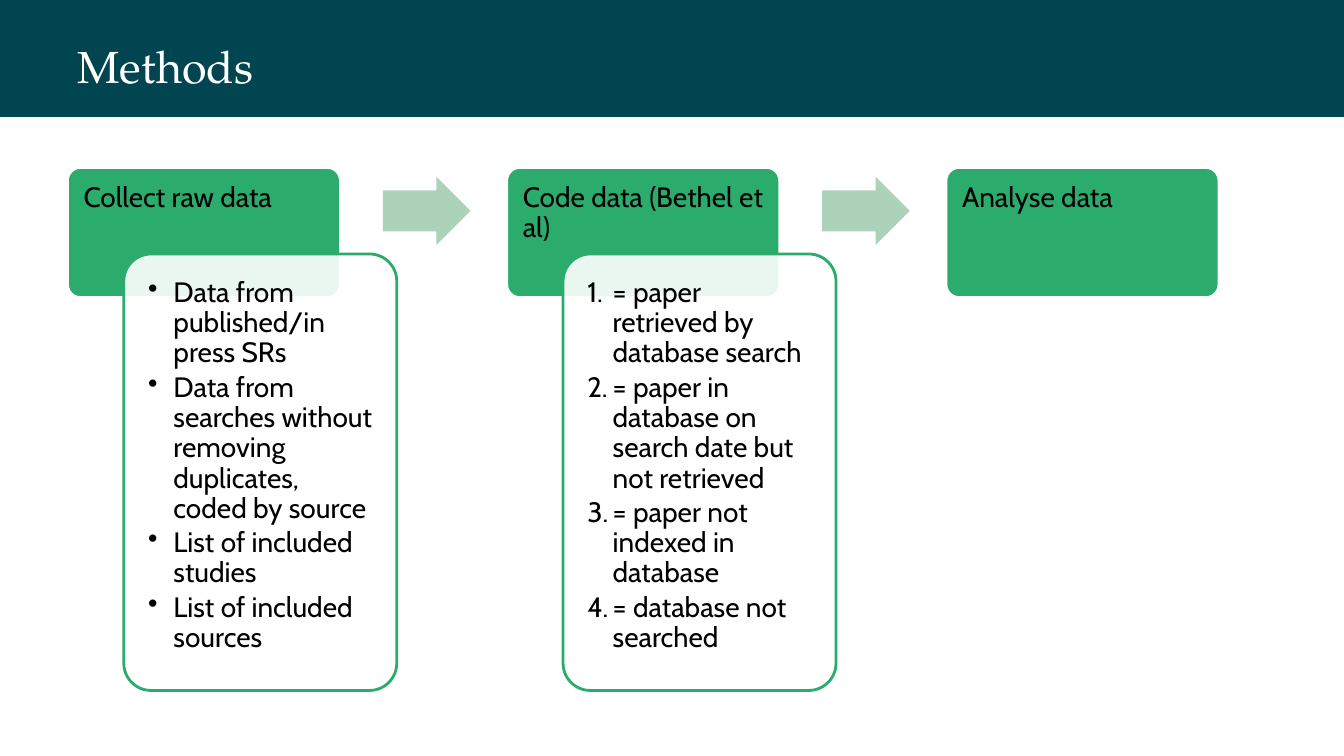
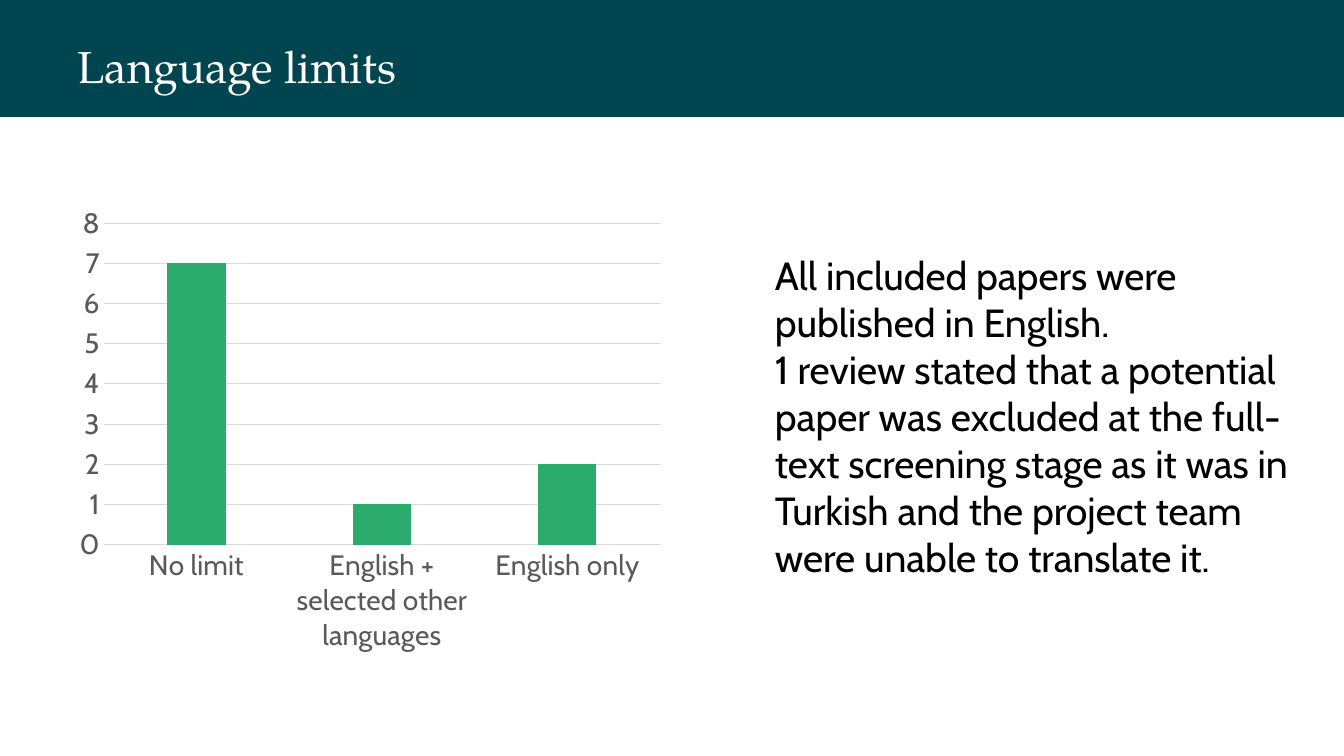
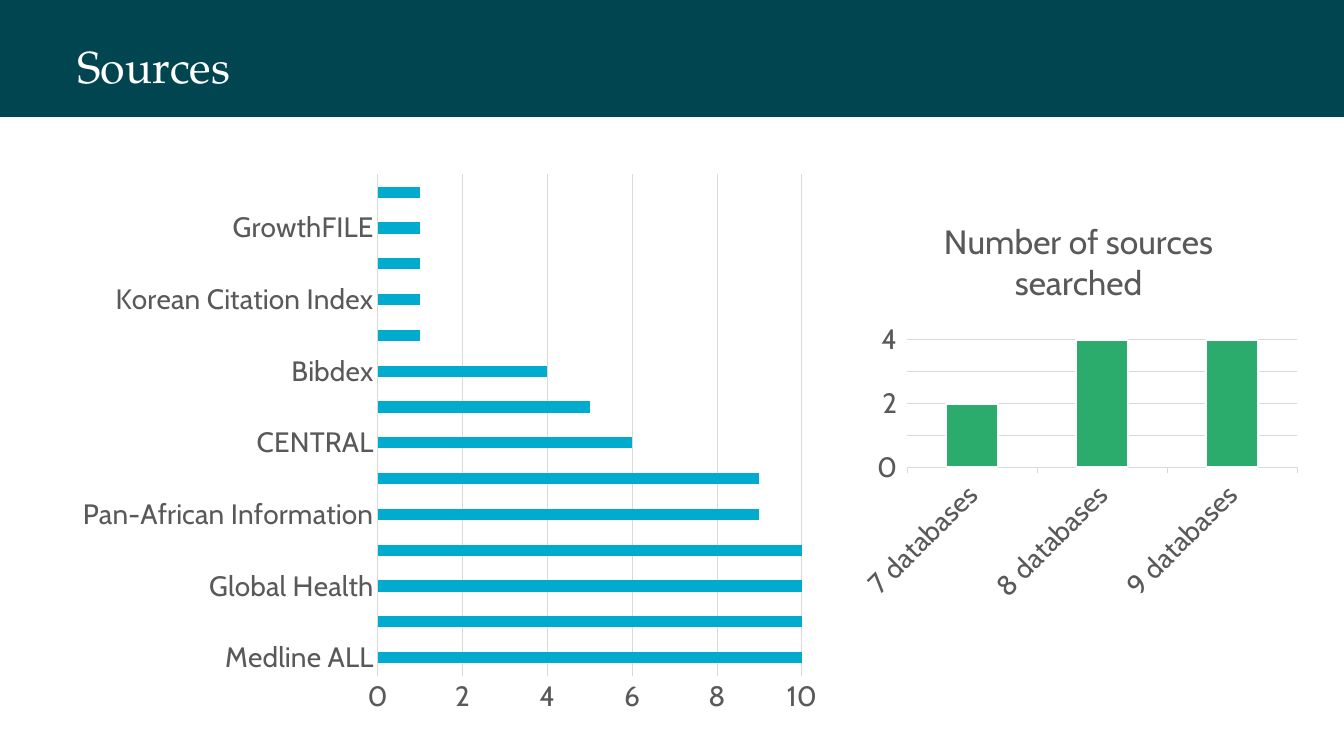
"""Build three slides on review methods, language limits and sources."""
from dataclasses import dataclass
from typing import Optional

import lxml.etree
import pptx
import pptx.chart.data
import pptx.dml.color
import pptx.enum.chart
import pptx.enum.shapes
import pptx.enum.text
import pptx.oxml.ns
import pptx.util

Cm = pptx.util.Cm
Pt = pptx.util.Pt
qn = pptx.oxml.ns.qn
XL = pptx.enum.chart.XL_CHART_TYPE
Tick = pptx.enum.chart.XL_TICK_MARK
Preset = pptx.enum.shapes.MSO_SHAPE
Anchor = pptx.enum.text.MSO_ANCHOR

COLORS = {
    "band": "004550",
    "green": "2BAC6D",
    "pale_green": "ADD2BA",
    "blue": "00ABCE",
    "white": "FFFFFF",
    "black": "000000",
    "label": "595959",
    "grid": "D9D9D9",
}
HEADING_FONT = "TeX Gyre Pagella"
BODY_FONT = "Cabin"
LEFT = 1.7
STEP_PITCH = 11.07
STEP_WIDTH = 6.88


@dataclass(frozen=True)
class Step:
    heading: str
    details: tuple[str, ...] = ()
    numbered: bool = False


@dataclass(frozen=True)
class BarChart:
    kind: int
    box: tuple[float, float, float, float]
    series: str
    values: dict[str, int]
    color: str
    top: int
    unit: int
    gap: int
    overlap: int = 0
    title: str = ""
    tick: int = Tick.NONE
    outline: Optional[str] = None
    label_rotation: Optional[int] = None


STEPS = (
    Step("Collect raw data", (
        "Data from published/in press SRs",
        "Data from searches without removing duplicates, coded by source",
        "List of included studies",
        "List of included sources",
    )),
    Step("Code data (Bethel et al)", (
        "= paper retrieved by database search",
        "= paper in database on search date but not retrieved",
        "= paper not indexed in database",
        "= database not searched",
    ), numbered=True),
    Step("Analyse data"),
)

LANGUAGE_CHART = BarChart(
    XL.COLUMN_CLUSTERED, (LEFT, 4.95, 15.24, 11.73), "Series 1",
    {"No limit": 7, "English + selected other languages": 1, "English only": 2},
    "green", top=8, unit=1, gap=219, overlap=-27, label_rotation=0,
)
SOURCE_CHART = BarChart(
    XL.BAR_CLUSTERED, (LEFT, 4.11, 19.28, 14.17), "Series 1",
    {
        "Medline ALL": 10, "Medbas": 10, "Global Health": 10,
        "Citation Index CC": 10, "Pan-African Information": 9,
        "Global Index Medicus": 9, "CENTRAL": 6, "Nursing Complete": 5,
        "Bibdex": 4, "EconBas": 1, "Korean Citation Index": 1, "SciELO": 1,
        "GrowthFILE": 1, "MindInfo": 1,
    },
    "blue", top=10, unit=2, gap=219,
)
COUNT_CHART = BarChart(
    XL.COLUMN_CLUSTERED, (21.44, 5, 11.48, 10.41), "Number of sources searched",
    {"7 databases": 2, "8 databases": 4, "9 databases": 4},
    "green", top=4, unit=1, gap=150, title="Number of sources searched",
    tick=Tick.OUTSIDE, outline="white", label_rotation=-45,
)
LANGUAGE_NOTES = (
    "All included papers were published in English.",
    "1 review stated that a potential paper was excluded at the full-text "
    "screening stage as it was in Turkish and the project team were unable "
    "to translate it.",
)


def rgb(name: str) -> pptx.dml.color.RGBColor:
    return pptx.dml.color.RGBColor.from_string(COLORS[name])


def style_font(font, size: float, color: str, name: str = BODY_FONT) -> None:
    font.size, font.name, font.bold = Pt(size), name, False
    font.color.rgb = rgb(color)


def add_block(slide, preset: int, box: tuple[float, ...], fill: str,
              outline: Optional[str] = None):
    block = slide.shapes.add_shape(preset, *map(Cm, box))
    block.shadow.inherit = False
    block.fill.solid()
    block.fill.fore_color.rgb = rgb(fill)
    if outline:
        block.line.color.rgb = rgb(outline)
        block.line.width = Pt(2)
    else:
        block.line.fill.background()
    return block


def add_titled_slide(deck, title: str):
    slide = deck.slides.add_slide(deck.slide_layouts[6])
    add_block(slide, Preset.RECTANGLE, (0, 0, 33.87, 2.95), "band")
    heading = slide.shapes.add_textbox(Cm(LEFT), Cm(0.79), Cm(24.13), Cm(1.73))
    frame = heading.text_frame
    frame.word_wrap = True
    frame.vertical_anchor = Anchor.MIDDLE
    frame.text = title
    style_font(frame.paragraphs[0].font, 32, "white", HEADING_FONT)
    return slide


def write_paragraphs(frame, lines: tuple[str, ...], size: float) -> None:
    frame.word_wrap = True
    frame.vertical_anchor = Anchor.TOP
    frame.text = "\n".join(lines)
    for paragraph in frame.paragraphs:
        paragraph.alignment = pptx.enum.text.PP_ALIGN.LEFT
        style_font(paragraph.font, size, "black")


def add_bullet(paragraph, numbered: bool) -> None:
    properties = paragraph._p.get_or_add_pPr()
    properties.set("marL", str(Cm(0.64)))
    properties.set("indent", str(Cm(-0.64)))
    if numbered:
        lxml.etree.SubElement(properties, qn("a:buAutoNum"), type="arabicPeriod")
    else:
        lxml.etree.SubElement(properties, qn("a:buChar"), char="•")


def add_card(slide, box: tuple[float, ...], fill: str, outline: str,
             lines: tuple[str, ...], inset: float, space_after: float,
             numbered: Optional[bool] = None):
    card = add_block(slide, Preset.ROUNDED_RECTANGLE, box, fill, outline)
    card.adjustments[0] = 0.1
    frame = card.text_frame
    frame.margin_left = frame.margin_right = Cm(inset)
    frame.margin_top = frame.margin_bottom = Cm(inset)
    frame.text = "\n".join(lines)
    if numbered is not None:
        for paragraph in frame.paragraphs:
            add_bullet(paragraph, numbered)
    for paragraph in frame.paragraphs:
        paragraph.line_spacing = 0.9
        paragraph.space_after = Pt(space_after)
        paragraph.alignment = pptx.enum.text.PP_ALIGN.LEFT
        style_font(paragraph.font, 20, "black")
    frame.word_wrap = True
    frame.vertical_anchor = Anchor.TOP
    return card


def add_step(slide, index: int, step: Step) -> None:
    left = LEFT + index * STEP_PITCH
    add_card(slide, (left, 4.22, STEP_WIDTH, 3.28), "green", "white",
             (step.heading,), 0.31, 7)
    if step.details:
        details = add_card(slide, (left + 1.42, 6.4, STEP_WIDTH, 11), "white",
                           "green", step.details, 0.41, 3, step.numbered)
        color = details._element.spPr.find(qn("a:solidFill"))[0]
        lxml.etree.SubElement(color, qn("a:alpha"), val="90000")
    if index < len(STEPS) - 1:
        arrow = add_block(slide, Preset.RIGHT_ARROW,
                          (left + 7.95, 4.45, 2.21, 1.73), "pale_green")
        arrow.adjustments[0] = 0.6
        arrow.adjustments[1] = 0.5


def add_bar_chart(slide, design: BarChart) -> None:
    data = pptx.chart.data.CategoryChartData()
    data.categories = list(design.values)
    data.add_series(design.series, list(design.values.values()))
    chart = slide.shapes.add_chart(design.kind, *map(Cm, design.box), data).chart
    style_font(chart.font, 10, "black")
    chart.has_legend = False
    chart.has_title = bool(design.title)
    if design.title:
        frame = chart.chart_title.text_frame
        frame.text = design.title
        style_font(frame.paragraphs[0].font, 24, "label")
        chart.chart_title.include_in_layout = False

    plot = chart.plots[0]
    plot.vary_by_categories = False
    plot.gap_width, plot.overlap = design.gap, design.overlap
    bars = plot.series[0].format
    bars.fill.solid()
    bars.fill.fore_color.rgb = rgb(design.color)
    if design.outline:
        bars.line.color.rgb = rgb(design.outline)
        bars.line.width = Pt(1.5)

    categories, scale = chart.category_axis, chart.value_axis
    for axis in (categories, scale):
        style_font(axis.tick_labels.font, 20, "label")
        axis.major_tick_mark = design.tick
        axis.minor_tick_mark = Tick.NONE
    categories.has_major_gridlines = False
    scale.has_major_gridlines = True
    scale.minimum_scale, scale.maximum_scale = 0, design.top
    scale.major_unit = design.unit
    scale.format.line.fill.background()
    for line in (categories.format.line, scale.major_gridlines.format.line):
        line.color.rgb = rgb("grid")
        line.width = Pt(0.75)
    if design.label_rotation is not None:
        body = categories._element.find(qn("c:txPr")).find(qn("a:bodyPr"))
        body.set("rot", str(design.label_rotation * 60000))


def main() -> None:
    deck = pptx.Presentation()
    deck.slide_width, deck.slide_height = Cm(33.87), Cm(19.05)

    methods = add_titled_slide(deck, "Methods")
    for index, step in enumerate(STEPS):
        add_step(methods, index, step)

    languages = add_titled_slide(deck, "Language limits")
    add_bar_chart(languages, LANGUAGE_CHART)
    notes = languages.shapes.add_textbox(Cm(19.28), Cm(6.2), Cm(13.89), Cm(8.64))
    write_paragraphs(notes.text_frame, LANGUAGE_NOTES, 28)

    sources = add_titled_slide(deck, "Sources")
    for design in (SOURCE_CHART, COUNT_CHART):
        add_bar_chart(sources, design)

    deck.save("out.pptx")


if __name__ == "__main__":
    main()
